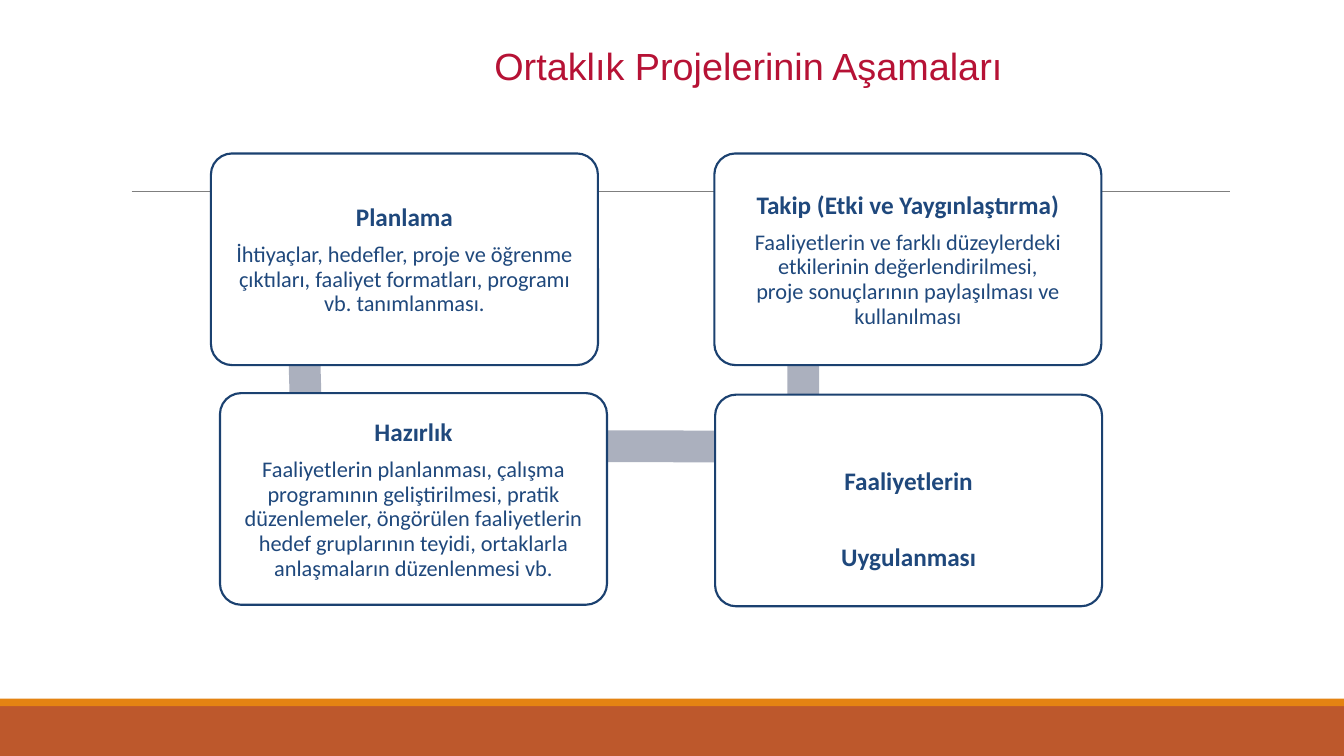
from dataclasses import dataclass

from pptx import Presentation
from pptx.dml.color import RGBColor
from pptx.enum.shapes import MSO_CONNECTOR, MSO_SHAPE
from pptx.enum.text import MSO_ANCHOR, PP_ALIGN
from pptx.oxml.ns import qn
from pptx.util import Inches, Pt
from lxml import etree

CENTER, LEFT = PP_ALIGN.CENTER, PP_ALIGN.LEFT
MIDDLE, BOTTOM = MSO_ANCHOR.MIDDLE, MSO_ANCHOR.BOTTOM
RECTANGLE, ROUNDED = MSO_SHAPE.RECTANGLE, MSO_SHAPE.ROUNDED_RECTANGLE
STRAIGHT = MSO_CONNECTOR.STRAIGHT

SLIDE_WIDTH, SLIDE_HEIGHT = 17.78, 10
CARD_WIDTH, CARD_HEIGHT = 5.12, 2.8
COLORS = {
    "title": "B61235",
    "text": "1F487C",
    "outline": "1B4170",
    "card": "FFFFFF",
    "link": "ABB0BE",
    "rule": "7F7F7F",
    "footer": "BD582C",
    "footer_edge": "E48312",
}


@dataclass
class Card:
    left: float
    top: float
    headings: list[str]
    body: str = ""
    top_inset: float = 0


CARDS = [
    Card(2.79, 2.03, ["Planlama"],
         "İhtiyaçlar, hedefler, proje ve öğrenme çıktıları, "
         "faaliyet formatları, programı vb. tanımlanması."),
    Card(2.91, 5.2, ["Hazırlık"],
         "Faaliyetlerin planlanması, çalışma programının geliştirilmesi, "
         "pratik düzenlemeler, öngörülen faaliyetlerin hedef gruplarının "
         "teyidi, ortaklarla anlaşmaların düzenlenmesi vb."),
    Card(9.46, 5.22, ["Faaliyetlerin", "Uygulanması"], top_inset=0.48),
    Card(9.45, 2.03, ["Takip (Etki ve Yaygınlaştırma)"],
         "Faaliyetlerin ve farklı düzeylerdeki etkilerinin "
         "değerlendirilmesi,\vproje sonuçlarının paylaşılması ve kullanılması"),
]

# Corner points of the slightly slanted bands that link the stages
LINKS = [
    [(4.18, 2.71), (3.76, 2.72), (3.85, 5.89), (4.27, 5.88)],
    [(4.09, 5.68), (4.09, 6.1), (10.62, 6.12), (10.62, 5.7)],
    [(10.83, 2.73), (10.41, 2.73), (10.42, 5.9), (10.84, 5.9)],
]


def color(name: str) -> RGBColor:
    return RGBColor.from_string(COLORS[name])


def fill_plain(shape, fill: str) -> None:
    """Give a shape a solid fill, no outline and no shadow."""
    shape.shadow.inherit = False
    shape.fill.solid()
    shape.fill.fore_color.rgb = color(fill)
    shape.line.fill.background()


def add_band(slide, top: float, height: float, fill: str) -> None:
    band = slide.shapes.add_shape(
        RECTANGLE, 0, Inches(top), Inches(SLIDE_WIDTH), Inches(height))
    fill_plain(band, fill)


def add_rule(slide) -> None:
    rule = slide.shapes.add_connector(
        STRAIGHT, Inches(1.74), Inches(2.53), Inches(16.27), Inches(2.53))
    rule.line.color.rgb = color("rule")
    rule.line.width = Pt(0.75)
    etree.SubElement(rule._element.spPr, qn("a:effectLst"))


def add_title(slide, text: str) -> None:
    title = slide.shapes.title
    title.left, title.top = Inches(6.54), Inches(0.55)
    title.width, title.height = Inches(6.76), Inches(0.62)
    frame = title.text_frame
    frame.margin_left = frame.margin_right = frame.margin_bottom = 0
    frame.margin_top = Inches(0.02)
    frame.vertical_anchor = BOTTOM
    frame.text = text
    paragraph = frame.paragraphs[0]
    paragraph.alignment = LEFT
    paragraph.font.name = "Arial"
    paragraph.font.size = Pt(36)
    paragraph.font.color.rgb = color("title")


def add_link(slide, points: list[tuple[float, float]]) -> None:
    corners = [(Inches(x), Inches(y)) for x, y in points]
    builder = slide.shapes.build_freeform(*corners[0])
    builder.add_line_segments(corners[1:], close=True)
    fill_plain(builder.convert_to_shape(), "link")


def format_paragraph(paragraph, size: float, bold: bool) -> None:
    paragraph.alignment = CENTER
    paragraph.font.name = "Calibri"
    paragraph.font.size = Pt(size)
    paragraph.font.bold = bold
    paragraph.font.color.rgb = color("text")


def add_card(slide, card: Card) -> None:
    shape = slide.shapes.add_shape(
        ROUNDED, Inches(card.left), Inches(card.top),
        Inches(CARD_WIDTH), Inches(CARD_HEIGHT))
    shape.adjustments[0] = 0.1
    fill_plain(shape, "card")
    shape.line.color.rgb = color("outline")
    shape.line.width = Pt(2.04)

    frame = shape.text_frame
    frame.word_wrap = True
    frame.vertical_anchor = MIDDLE
    frame.margin_left = frame.margin_right = Inches(0.22)
    frame.margin_top, frame.margin_bottom = Inches(card.top_inset), 0

    for index, heading in enumerate(card.headings):
        paragraph = frame.add_paragraph() if index else frame.paragraphs[0]
        paragraph.text = heading
        format_paragraph(paragraph, 24, True)
        if index:
            paragraph.space_before = Pt(43)
    if card.body:
        paragraph = frame.add_paragraph()
        paragraph.text = card.body
        paragraph.line_spacing = 0.92
        paragraph.space_before = Pt(10.5)
        format_paragraph(paragraph, 21.3, False)


def main() -> None:
    presentation = Presentation()
    presentation.slide_width = Inches(SLIDE_WIDTH)
    presentation.slide_height = Inches(SLIDE_HEIGHT)
    slide = presentation.slides.add_slide(presentation.slide_layouts[5])

    add_band(slide, 9.33, 0.67, "footer")
    add_band(slide, 9.24, 0.1, "footer_edge")
    add_rule(slide)
    add_title(slide, "Ortaklık Projelerinin Aşamaları")
    for points in LINKS:
        add_link(slide, points)
    for card in CARDS:
        add_card(slide, card)

    presentation.save("out.pptx")


if __name__ == "__main__":
    main()
